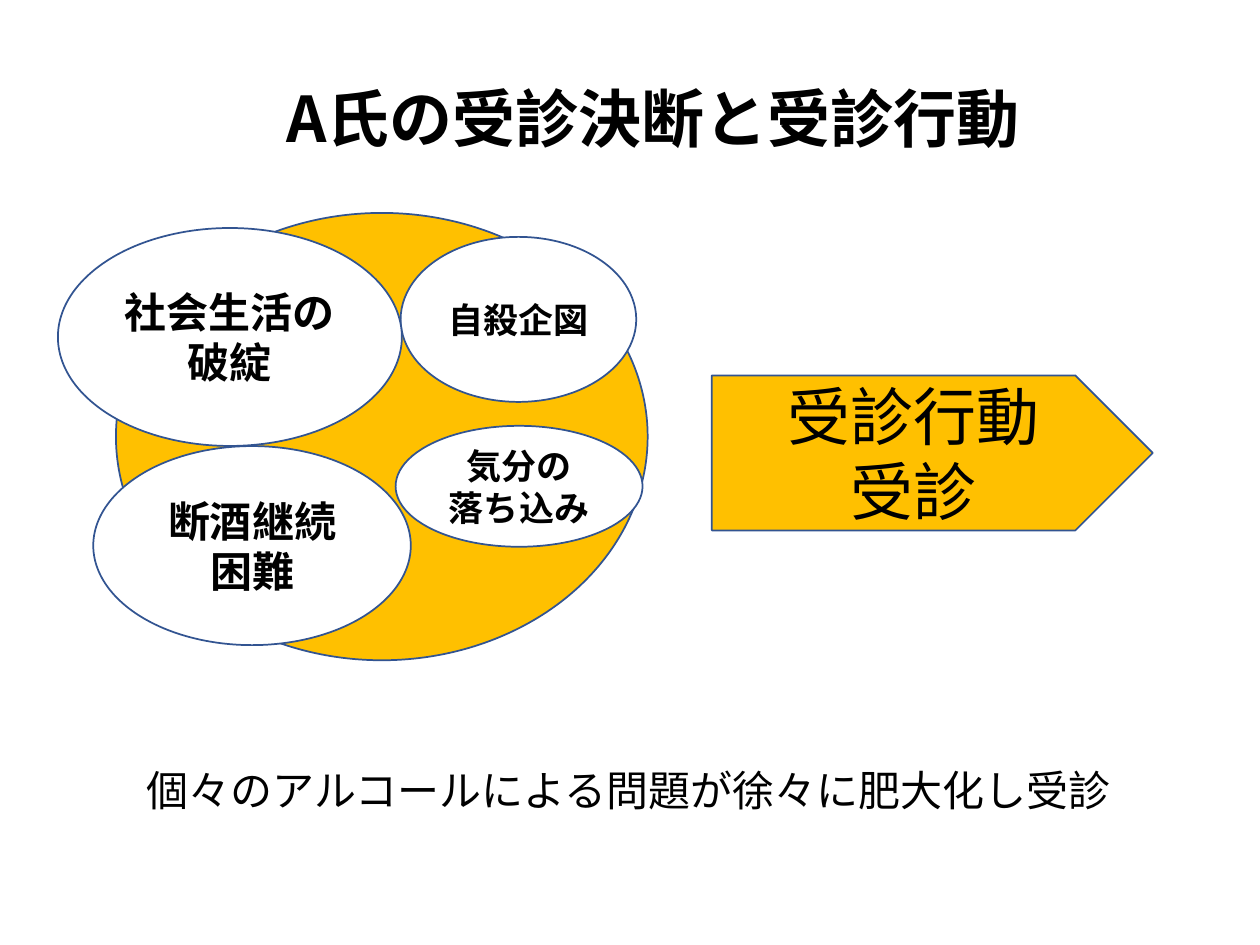
import pptx
import pptx.util
import pptx.dml.color
import pptx.enum.shapes
import pptx.enum.text
import pptx.oxml
import pptx.oxml.ns

Inches = pptx.util.Inches
Kind = pptx.enum.shapes.MSO_SHAPE
Anchor = pptx.enum.text.MSO_ANCHOR
FONT = "Noto Sans CJK JP"
GOLD, WHITE, BLUE, BLACK = "FFC000", "FFFFFF", "325491", "000000"


def color(code):
    return pptx.dml.color.RGBColor.from_string(code)


def write(shape, text, size, bold=False, anchor=Anchor.MIDDLE, gap=1.0):
    frame = shape.text_frame
    frame.text = text
    frame.word_wrap = True
    frame.vertical_anchor = anchor
    for para in frame.paragraphs:
        para.alignment = pptx.enum.text.PP_ALIGN.CENTER
        para.line_spacing = gap
        for run in para.runs:
            font = run.font
            font.name = FONT
            font.size = pptx.util.Pt(size)
            font.bold = bold
            font.color.rgb = color(BLACK)
            east = pptx.oxml.parse_xml(
                f'<a:ea {pptx.oxml.ns.nsdecls("a")} typeface="{FONT}"/>')
            run.font.latin = None
            run._r.get_or_add_rPr().append(east)


def draw(slide, kind, box, fill):
    shape = slide.shapes.add_shape(kind, *map(Inches, box))
    shape.shadow.inherit = False
    shape.fill.solid()
    shape.fill.fore_color.rgb = color(fill)
    shape.line.color.rgb = color(BLUE)
    shape.line.width = pptx.util.Pt(1)
    return shape


def add_title(slide, box):
    label = slide.shapes.add_textbox(*map(Inches, box))
    write(label, "A氏の受診決断と受診行動", 36, bold=True, gap=0.9)


def add_causes(slide, box):
    left, top, wide, high = box
    draw(slide, Kind.OVAL, (left + 0.46, top, wide - 0.46, high), GOLD)
    causes = [
        ("気分の\n落ち込み", 20, 2.68, 1.69, 1.96, 0.96),
        ("自殺企図", 20, 2.72, 0.19, 1.87, 1.31),
        ("断酒継続困難", 24, 0.28, 1.85, 2.52, 1.58),
        ("社会生活の\n破綻", 24, 0, 0.12, 2.73, 1.73),
    ]
    for text, size, x, y, w, h in causes:
        oval = draw(slide, Kind.OVAL, (left + x, top + y, w, h), WHITE)
        write(oval, text, size, bold=True)


def add_action(slide, box):
    write(draw(slide, Kind.PENTAGON, box, GOLD), "受診行動\n受診", 36)


def add_caption(slide, box):
    label = slide.shapes.add_textbox(*map(Inches, box))
    write(label, "個々のアルコールによる問題が徐々に肥大化し受診", 24,
          anchor=Anchor.TOP)


def main():
    deck = pptx.Presentation()
    deck.slide_width = Inches(10)
    deck.slide_height = Inches(7.5)
    slide = deck.slides.add_slide(deck.slide_layouts[6])
    add_title(slide, (0.87, 0.24, 8.62, 1.45))
    add_causes(slide, (0.46, 1.69, 4.68, 3.55))
    add_caption(slide, (0.46, 6.02, 9.06, 0.91))
    add_action(slide, (5.65, 2.98, 3.5, 1.23))
    deck.save("out.pptx")


if __name__ == "__main__":
    main()
